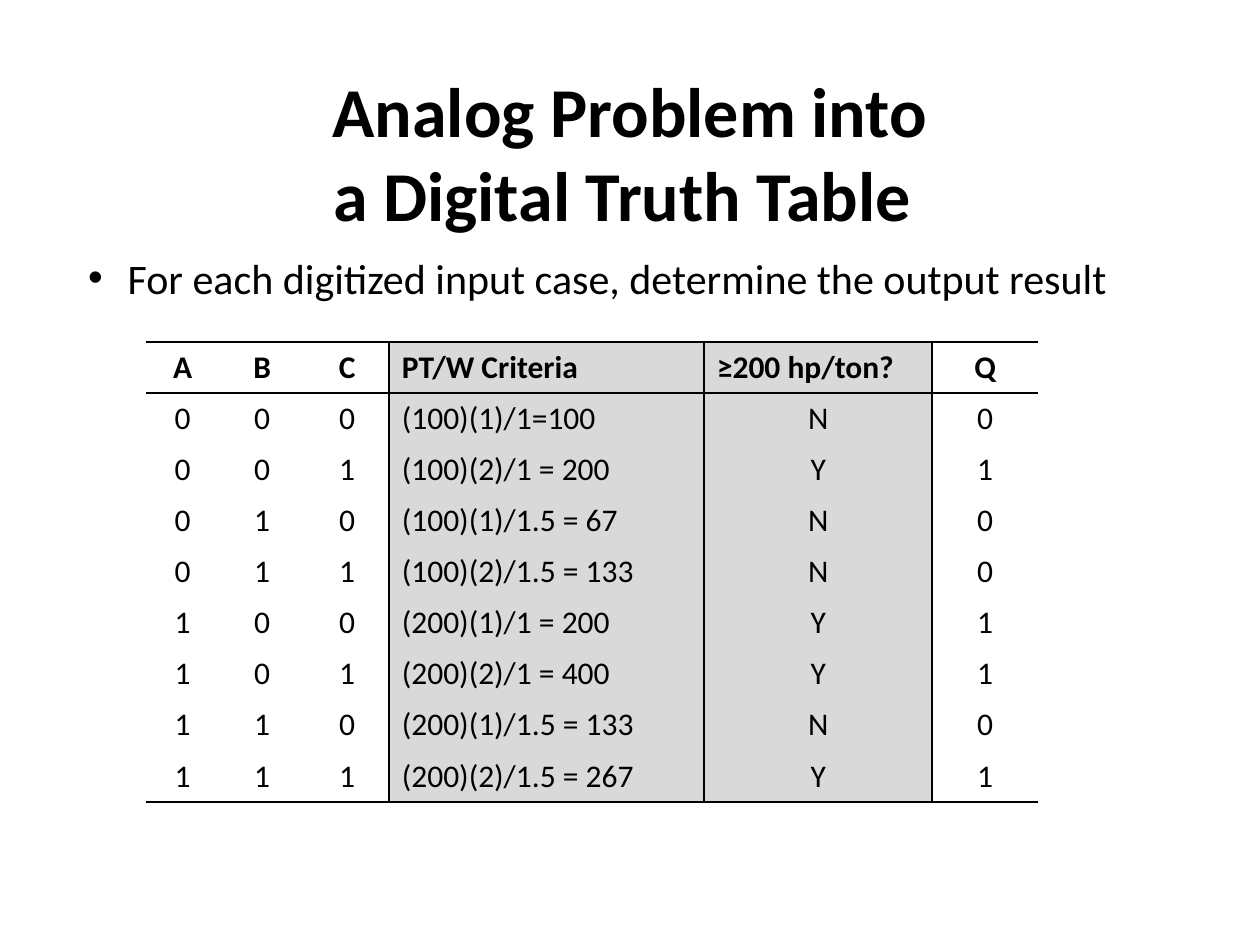
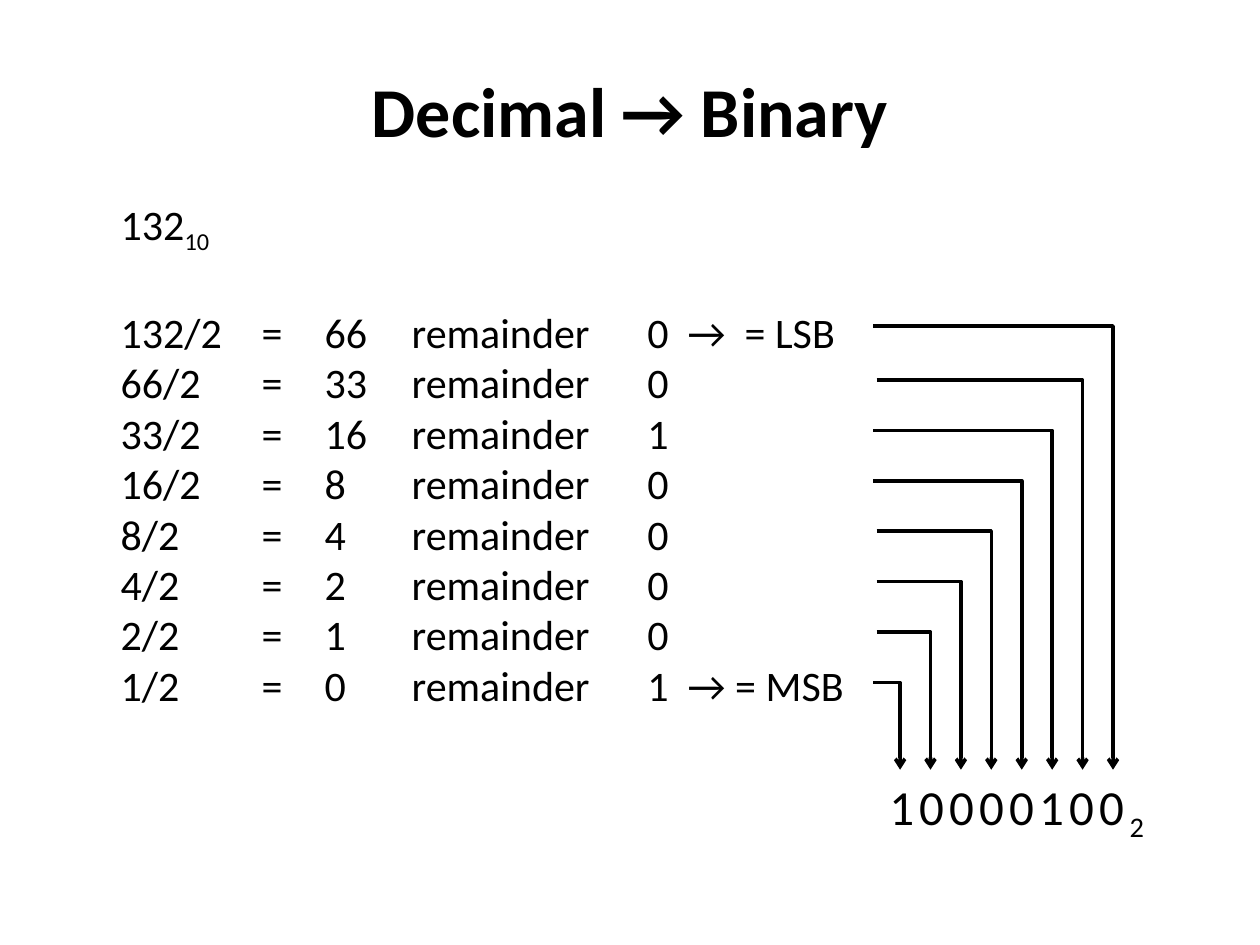
from itertools import product

from lxml.etree import SubElement
from pptx import Presentation
from pptx.dml.color import RGBColor
from pptx.enum.text import MSO_ANCHOR as Anchor, MSO_AUTO_SIZE as AutoSize, PP_ALIGN as Align
from pptx.oxml.ns import qn
from pptx.util import Pt

# Shared look
FONT = "Calibri"
BLACK = "000000"
SHADE = "D9D9D9"
TITLE_STYLE = {"size": Pt(40), "bold": True}
BODY_STYLE = {"size": Pt(24), "bold": False}
CONTENT_LAYOUT, TITLE_LAYOUT = 1, 5

# Truth table content
HEADINGS = ["A", "B", "C", "PT/W Criteria", "≥200 hp/ton?", "Q"]
COLUMN_WIDTHS = [41.8, 49, 48.2, 180, 130.3, 60.5]
ROW_HEIGHT = 29.2
RULE_WIDTH = 1.25
CRITERIA = [
    ("(100)(1)/1=100", "N"),
    ("(100)(2)/1 = 200", "Y"),
    ("(100)(1)/1.5 = 67", "N"),
    ("(100)(2)/1.5 = 133", "N"),
    ("(200)(1)/1 = 200", "Y"),
    ("(200)(2)/1 = 400", "Y"),
    ("(200)(1)/1.5 = 133", "N"),
    ("(200)(2)/1.5 = 267", "Y"),
]

# Binary conversion content
DECIMAL = 132
TAB_STOPS = [80.6, 116.6, 166.3, 301, 324]
BIT_PITCH = 17.38
ROW_PITCH = 28.8


def color(value):
    return RGBColor.from_string(value)


def place(shape, left, top, width, height):
    for name, value in {"left": left, "top": top, "width": width, "height": height}.items():
        setattr(shape, name, Pt(value))


def add_span(para, text, style, **extra):
    """Add a run; extra holds raw run attributes such as baseline or spc."""
    span = para.add_run()
    span.text = text
    for name, value in {"name": FONT, **style}.items():
        setattr(span.font, name, value)
    span.font.color.rgb = color(BLACK)
    for name, value in extra.items():
        span.font._element.set(name, value)


def set_bullet(para, bullet, indent):
    props = para._p.get_or_add_pPr()
    props.set("marL", str(Pt(indent)))
    props.set("indent", str(Pt(-indent)))
    SubElement(props, qn("a:buChar"), char=bullet)


def set_tabs(para, positions):
    stops = SubElement(para._p.get_or_add_pPr(), qn("a:tabLst"))
    for position in positions:
        SubElement(stops, qn("a:tab"), pos=str(Pt(position)), algn="l")


def prepare_frame(box, wrap=True):
    frame = box.text_frame
    settings = {"word_wrap": wrap, "auto_size": AutoSize.NONE, "vertical_anchor": Anchor.TOP}
    for name, value in settings.items():
        setattr(frame, name, value)
    return frame


def add_text_frame(page, left, top, width, height, wrap=True):
    box = page.shapes.add_textbox(Pt(left), Pt(top), Pt(width), Pt(height))
    return prepare_frame(box, wrap)


def add_page(deck, layout, title_lines, title_height):
    page = deck.slides.add_slide(deck.slide_layouts[layout])
    title = page.shapes.title
    place(title, 93.2, 35, 533.5, title_height)
    frame = prepare_frame(title)
    for number, line in enumerate(title_lines):
        para = frame.add_paragraph() if number else frame.paragraphs[0]
        para.alignment = Align.CENTER
        add_span(para, line, TITLE_STYLE)
    return page


def set_borders(cell, sides):
    props = cell._tc.get_or_add_tcPr()
    for side in "LRTB":
        line = SubElement(props, qn(f"a:ln{side}"), w=str(Pt(RULE_WIDTH)))
        if side in sides:
            fill = SubElement(line, qn("a:solidFill"))
            SubElement(fill, qn("a:srgbClr"), val=BLACK)
        else:
            SubElement(line, qn("a:noFill"))


def add_truth_table(page, rows, left, top):
    frame = page.shapes.add_table(len(rows), len(HEADINGS), Pt(left), Pt(top),
                                  Pt(sum(COLUMN_WIDTHS)), Pt(ROW_HEIGHT * len(rows)))
    table = frame.table
    table.first_row = table.horz_banding = False
    for column, width in zip(table.columns, COLUMN_WIDTHS):
        column.width = Pt(width)
    for row_number, values in enumerate(rows):
        table.rows[row_number].height = Pt(ROW_HEIGHT)
        header = row_number == 0
        for column_number, value in enumerate(values):
            cell = table.cell(row_number, column_number)
            para = cell.text_frame.paragraphs[0]
            left_aligned = column_number == 3 or (header and column_number == 4)
            para.alignment = Align.LEFT if left_aligned else Align.CENTER
            add_span(para, value, {"size": Pt(18), "bold": header})
            # Rules around the header, below the last row and beside the shaded columns
            sides = "T" if row_number <= 1 else ""
            sides += "B" if header or row_number == len(rows) - 1 else ""
            sides += "L" if column_number >= 3 else ""
            sides += "R" if 2 <= column_number <= 4 else ""
            set_borders(cell, sides)
            if column_number in (3, 4):
                cell.fill.solid()
                cell.fill.fore_color.rgb = color(SHADE)
            else:
                cell.fill.background()


def add_elbow_arrow(page, left, top, right, bottom):
    builder = page.shapes.build_freeform(Pt(left), Pt(top))
    builder.add_line_segments([(Pt(right), Pt(top)), (Pt(right), Pt(bottom))], close=False)
    arrow = builder.convert_to_shape()
    arrow.shadow.inherit = False
    arrow.fill.background()
    arrow.line.color.rgb = color(BLACK)
    arrow.line.width = Pt(2)
    SubElement(arrow.line._get_or_add_ln(), qn("a:tailEnd"), type="arrow")


def division_lines(number):
    """Yield one tabbed line for each halving down to zero."""
    first = number
    while number:
        half, bit = divmod(number, 2)
        note = "\t→  = LSB" if number == first else "\t→ = MSB" if half == 0 else ""
        yield f"{number}/2\t=\t{half}\tremainder\t{bit}{note}"
        number = half


def build_truth_table_page(deck):
    page = add_page(deck, CONTENT_LAYOUT,
                    ["Analog Problem into", "a Digital Truth Table "], 104.4)
    body = page.placeholders[1]
    place(body, 43.2, 140.4, 625.7, 36)
    para = prepare_frame(body).paragraphs[0]
    para.space_before = Pt(12)
    set_bullet(para, "•", 22.5)
    add_span(para, "For each digitized input case, determine the output result", BODY_STYLE)

    rows = [HEADINGS]
    for bits, (criterion, answer) in zip(product("01", repeat=3), CRITERIA):
        rows.append([*bits, criterion, answer, "1" if answer == "Y" else "0"])
    add_truth_table(page, rows, 83.5, 195.4)


def build_binary_page(deck):
    page = add_page(deck, TITLE_LAYOUT, ["Decimal → Binary"], 55.4)

    # Repeated division
    frame = add_text_frame(page, 61.9, 109.8, 499.7, 298)
    number = frame.paragraphs[0]
    add_span(number, str(DECIMAL), BODY_STYLE)
    add_span(number, "10", BODY_STYLE, baseline="-25000")
    lines = list(division_lines(DECIMAL))
    for step, line in enumerate(lines):
        para = frame.add_paragraph()
        para.space_before = Pt(0 if step else 29)
        set_tabs(para, TAB_STOPS)
        add_span(para, line, BODY_STYLE)

    # Binary result
    para = add_text_frame(page, 501.1, 439.9, 162.7, 41, wrap=False).paragraphs[0]
    add_span(para, f"{DECIMAL:b}", {"size": Pt(28)}, spc="300")
    add_span(para, "2", {"size": Pt(28)}, baseline="-25000")

    # Each remainder points to its bit, lowest bit at the right
    for step in range(len(lines)):
        left = 501 if step in (1, 4, 5, 6) else 499
        top = 217.2 + ROW_PITCH * (step - 1) if step else 186.3
        add_elbow_arrow(page, left, top, 636 - BIT_PITCH * step, 439.9)


def main():
    deck = Presentation()
    deck.slide_width, deck.slide_height = Pt(720), Pt(540)
    build_truth_table_page(deck)
    build_binary_page(deck)
    deck.save("out.pptx")


if __name__ == "__main__":
    main()
